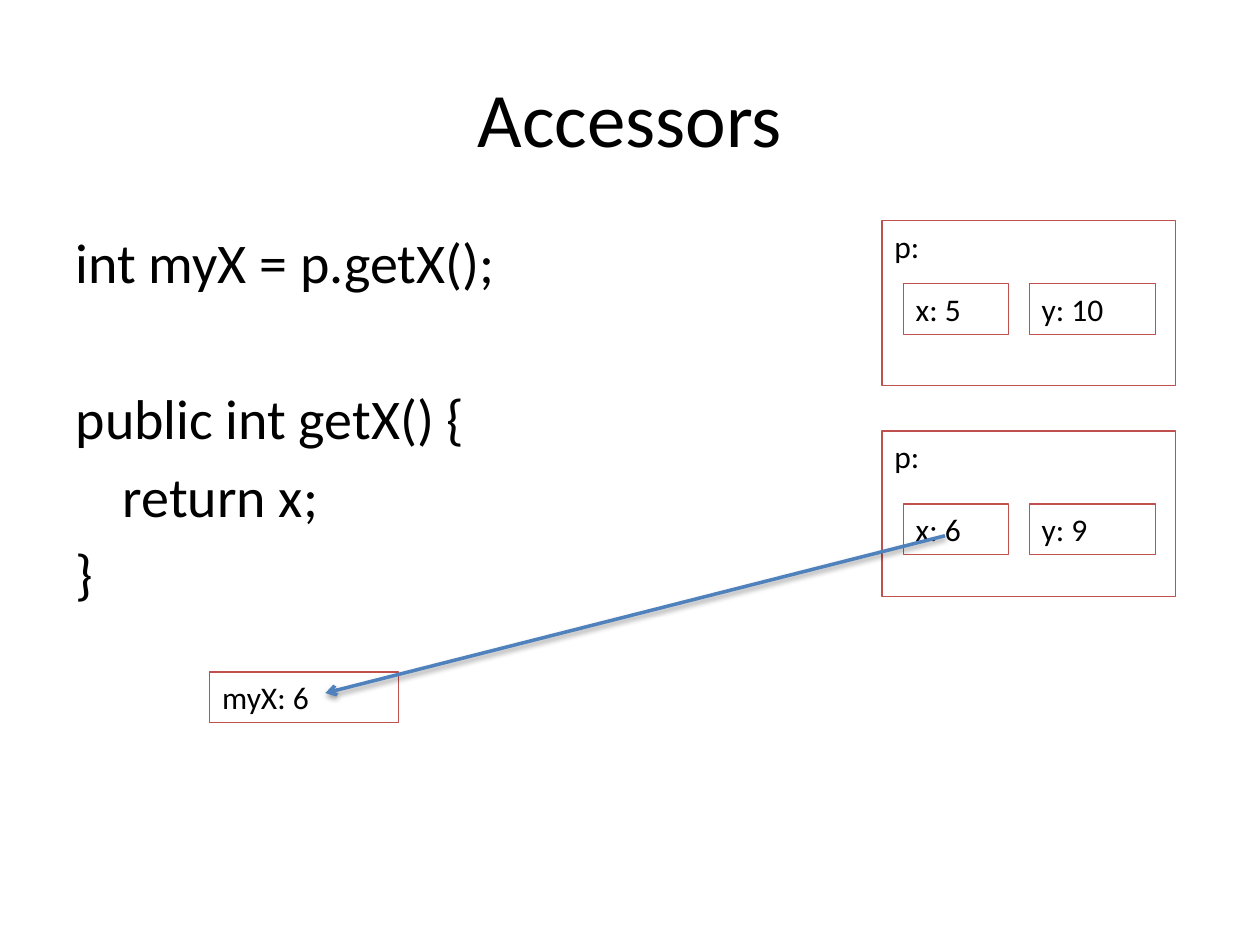
from lxml.etree import SubElement
from pptx import Presentation
from pptx.dml.color import RGBColor
from pptx.enum.shapes import MSO_CONNECTOR, MSO_SHAPE
from pptx.enum.text import MSO_ANCHOR, PP_ALIGN
from pptx.oxml.ns import qn
from pptx.util import Cm, Pt

BLACK, RED, BLUE = "000000", "C0504D", "4F81BD"
LINE_PITCH, CODE_GAP = 45, 6  # points


def colour(value):
    return RGBColor.from_string(value)


def place(shape, left, top, width, height):
    shape.left, shape.top = Cm(left), Cm(top)
    shape.width, shape.height = Cm(width), Cm(height)


def style(para, size, align=PP_ALIGN.LEFT):
    para.alignment = align
    para.font.name, para.font.size = "Calibri", Pt(size)
    para.font.color.rgb = colour(BLACK)


def add_title(page, text, box):
    title = page.shapes.title
    place(title, *box)
    title.text_frame.text = text
    title.text_frame.vertical_anchor = MSO_ANCHOR.MIDDLE
    style(title.text_frame.paragraphs[0], 44, PP_ALIGN.CENTER)


def add_code(page, lines, box):
    """Each line is its text, its indent in cm and the blank lines above it."""
    body = page.placeholders[1]
    place(body, *box)
    frame = body.text_frame
    frame.text = "\n".join(text for text, _, _ in lines)
    for para, (_, indent, skipped) in zip(frame.paragraphs, lines):
        style(para, 32)
        para.space_before = Pt(CODE_GAP + skipped * LINE_PITCH)
        properties = para._p.get_or_add_pPr()
        properties.set("marL", str(Cm(indent)))
        properties.set("indent", "0")
        SubElement(properties, qn("a:buNone"))


def add_variable(page, text, left, top, width, height=1.02):
    box = page.shapes.add_shape(MSO_SHAPE.RECTANGLE, 0, 0, 0, 0)
    place(box, left, top, width, height)
    box.shadow.inherit = False
    box.fill.background()
    box.line.color.rgb, box.line.width = colour(RED), Pt(0.75)
    frame = box.text_frame
    frame.word_wrap = True
    frame.vertical_anchor = MSO_ANCHOR.TOP
    frame.text = text
    style(frame.paragraphs[0], 18)


def add_point(page, x, y, left, top, field_top):
    """Draw the object p with its two fields inside."""
    add_variable(page, "p:", left, top, 5.92, 3.33)
    add_variable(page, f"x: {x}", left + 0.43, top + field_top, 2.12)
    add_variable(page, f"y: {y}", left + 2.97, top + field_top, 2.54)


def add_copy_arrow(page, start, end):
    arrow = page.shapes.add_connector(
        MSO_CONNECTOR.STRAIGHT, *map(Cm, start), *map(Cm, end))
    arrow.line.color.rgb, arrow.line.width = colour(BLUE), Pt(2)
    SubElement(arrow.line._get_or_add_ln(), qn("a:tailEnd"), type="arrow")
    # Soft shadow straight below the line
    effects = SubElement(arrow._element.spPr, qn("a:effectLst"))
    shadow = SubElement(effects, qn("a:outerShdw"), blurRad=str(Pt(3.1)),
                        dist=str(Pt(1.6)), dir="5400000", rotWithShape="0")
    tint = SubElement(shadow, qn("a:srgbClr"), val=BLACK)
    SubElement(tint, qn("a:alpha"), val="38000")


def main():
    deck = Presentation()
    deck.slide_width, deck.slide_height = Cm(25.4), Cm(19.05)
    page = deck.slides.add_slide(deck.slide_layouts[1])

    # Title and code
    add_title(page, "Accessors", (1.27, 0.76, 22.86, 3.18))
    add_code(page, [
        ("int myX = p.getX();", 0, 0),
        ("public int getX() {", 0, 1),
        ("return x;", 0.95, 0),
        ("}", 0, 0),
    ], (1.27, 4.45, 22.86, 12.57))

    # Memory: the object before and after, and the value read from it
    add_point(page, 5, 10, 17.78, 4.45, 1.27)
    add_point(page, 6, 9, 17.78, 8.69, 1.47)
    add_variable(page, "myX: 6", 4.23, 13.55, 3.81)
    add_copy_arrow(page, (19.05, 10.8), (6.56, 13.97))

    deck.save("out.pptx")


if __name__ == "__main__":
    main()
